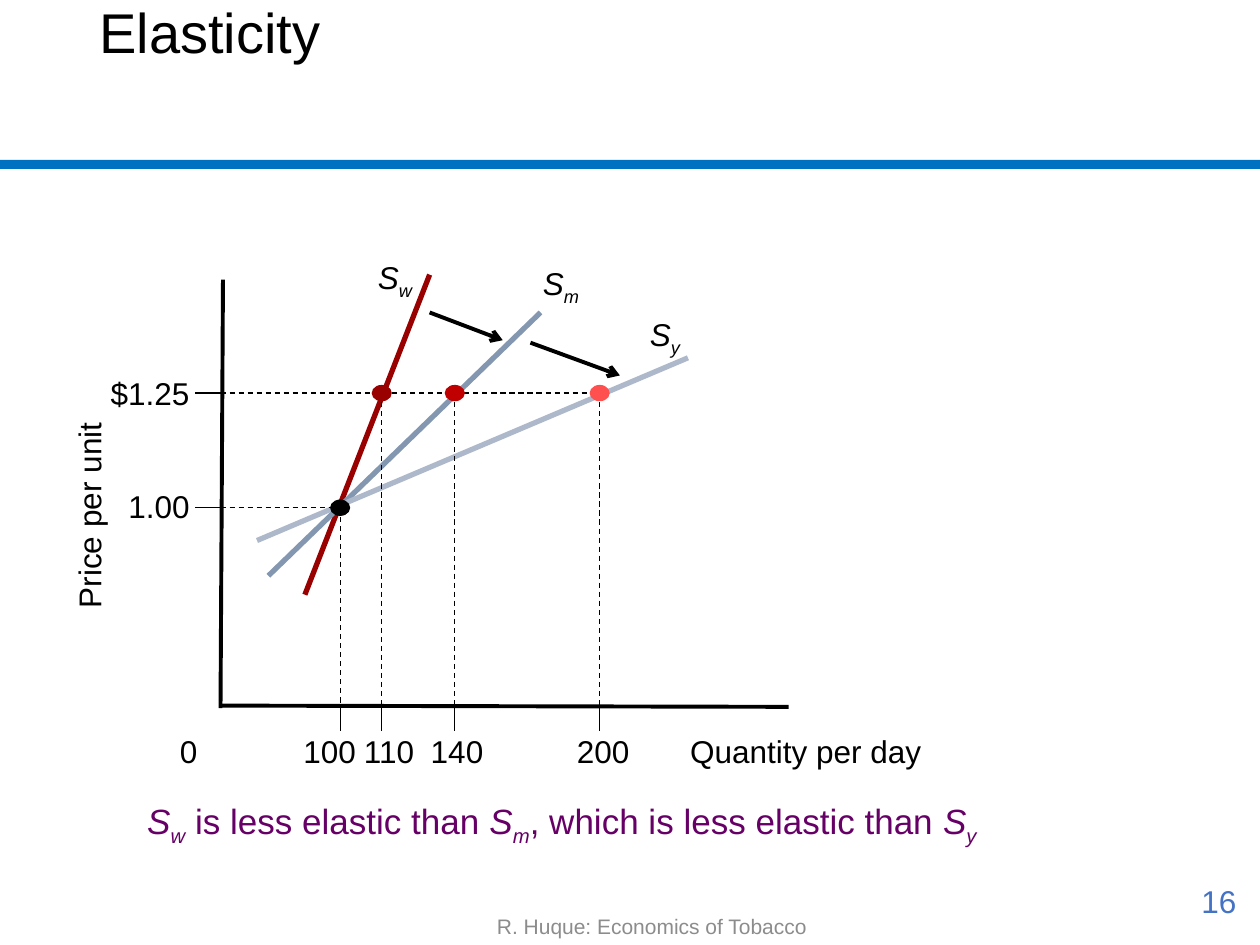
from lxml import etree
from pptx import Presentation
from pptx.dml.color import RGBColor
from pptx.enum.dml import MSO_LINE
from pptx.enum.shapes import MSO_CONNECTOR, MSO_SHAPE
from pptx.enum.text import MSO_ANCHOR, MSO_AUTO_SIZE, PP_ALIGN
from pptx.oxml.ns import qn
from pptx.util import Inches, Pt

STRAIGHT = MSO_CONNECTOR.STRAIGHT
RECTANGLE, OVAL = MSO_SHAPE.RECTANGLE, MSO_SHAPE.OVAL
DASH = MSO_LINE.DASH
GROW = MSO_AUTO_SIZE.SHAPE_TO_FIT_TEXT
TOP, MIDDLE, BOTTOM = MSO_ANCHOR.TOP, MSO_ANCHOR.MIDDLE, MSO_ANCHOR.BOTTOM
LEFT, CENTER, RIGHT = PP_ALIGN.LEFT, PP_ALIGN.CENTER, PP_ALIGN.RIGHT

FONT = "Arial"
BLACK = "000000"
WIDTH, HEIGHT = 10, 7.5
AXIS_X, AXIS_Y = 1.75, 5.6
LABEL_HEIGHT, LABEL_TOP = 0.4, 5.76
TICK = 0.2
DOT_WIDTH, DOT_HEIGHT = 0.16, 0.13
HIGH, LOW = 3.12, 4.03

AXES = [((1.77, 2.22), (AXIS_X, 5.62)), ((1.74, AXIS_Y), (6.26, 5.61))]
SUPPLY = [
    ("w", "990000", (2.42, 4.72), (3.41, 2.18), (2.9, 2, 0.49)),
    ("m", "8497B0", (2.13, 4.57), (4.29, 2.48), (4.21, 2.05, 0.51)),
    ("y", "ADB9CA", (2.04, 4.29), (5.46, 2.84), (5.06, 2.45, 0.45)),
]
QUANTITIES = [
    ("100", 2.7, LOW, BLACK, 2.31),
    ("110", 3.03, HIGH, "990000", 2.79),
    ("140", 3.61, HIGH, "C00000", 3.32),
    ("200", 4.76, HIGH, "FF5050", 4.48),
]
PRICES = [("$1.25", HIGH, 4.76, 0.78, 2.92, 0.83), ("1.00", LOW, 2.7, 0.92, 3.82, 0.69)]
SHIFTS = [((3.41, 2.48), (3.99, 2.7)), ((4.21, 2.72), (4.92, 2.98))]
CONCLUSION = [
    ("S", "italic"), ("w", "sub"), (" is less elastic than ", ""),
    ("S", "italic"), ("m", "sub"), (", which is less elastic than ", ""),
    ("S", "italic"), ("y", "sub"),
]


def color(value):
    return RGBColor.from_string(value)


def add_line(slide, start, end, line_color=BLACK, width=0.75, dashed=False, arrow=False):
    line = slide.shapes.add_connector(STRAIGHT, *map(Inches, start + end))
    line.line.color.rgb = color(line_color)
    line.line.width = Pt(width)
    if dashed:
        line.line.dash_style = DASH
    properties = line._element.spPr
    if arrow:
        etree.SubElement(properties.find(qn("a:ln")), qn("a:tailEnd"), type="arrow")
    etree.SubElement(properties, qn("a:effectLst"))


def add_filled(slide, kind, box, fill):
    shape = slide.shapes.add_shape(kind, *map(Inches, box))
    shape.shadow.inherit = False
    shape.fill.solid()
    shape.fill.fore_color.rgb = color(fill)
    shape.line.fill.background()


def add_text(slide, box, parts, size=18, text_color=BLACK, align=LEFT, anchor=TOP, wrap=False):
    shape = slide.shapes.add_textbox(*map(Inches, box))
    frame = shape.text_frame
    frame.word_wrap = wrap
    if not wrap:
        frame.auto_size = GROW
    frame.vertical_anchor = anchor
    paragraph = frame.paragraphs[0]
    paragraph.alignment = align
    for text, style in [(parts, "")] if isinstance(parts, str) else parts:
        run = paragraph.add_run()
        run.text = text
        run.font.name = FONT
        run.font.size = Pt(size)
        run.font.color.rgb = color(text_color)
        run.font.italic = style in ("italic", "sub")
        if style == "sub":
            run._r.get_or_add_rPr().set("baseline", "-25000")
    return shape


def add_frame(slide):
    add_filled(slide, RECTANGLE, (0, 1.27, WIDTH, 0.07), "0070C0")
    title = add_text(slide, (0.69, -0.01, 8.62, 1.28), "Elasticity", 32, wrap=True)
    title.text_frame.paragraphs[0].line_spacing = 0.9
    add_text(slide, (3.31, 7.1, 3.73, 0.4), "R. Huque: Economics of Tobacco", 12,
             "8C8C8C", CENTER, BOTTOM, True)
    add_text(slide, (7.66, 6.95, 2.25, 0.4), "16", 18, "4472C4", RIGHT, MIDDLE, True)


def add_diagram(slide):
    for start, end in AXES:
        add_line(slide, start, end, width=2.25)
    for name, line_color, start, end, (left, top, width) in SUPPLY:
        add_line(slide, start, end, line_color, 3)
        add_text(slide, (left, top, width, LABEL_HEIGHT), [("S", "italic"), (name, "sub")])
    for label, y, reach, left, top, width in PRICES:
        add_line(slide, (AXIS_X, y), (AXIS_X - TICK, y))
        add_line(slide, (AXIS_X, y), (reach, y), dashed=True)
        add_text(slide, (left, top, width, LABEL_HEIGHT), label)
    for label, x, y, fill, left in QUANTITIES:
        add_line(slide, (x, AXIS_Y), (x, AXIS_Y + TICK))
        add_line(slide, (x, y), (x, AXIS_Y), dashed=True)
        dot = (x - DOT_WIDTH / 2, y - DOT_HEIGHT / 2, DOT_WIDTH, DOT_HEIGHT)
        add_filled(slide, OVAL, dot, fill)
        add_text(slide, (left, LABEL_TOP, 0.62, LABEL_HEIGHT), label)
    add_text(slide, (1.33, LABEL_TOP, 0.34, LABEL_HEIGHT), "0")
    add_text(slide, (5.38, LABEL_TOP, 2.06, LABEL_HEIGHT), "Quantity per day")
    add_text(slide, (-0.13, 3.89, 1.67, LABEL_HEIGHT), "Price per unit").rotation = 270
    for start, end in SHIFTS:
        add_line(slide, start, end, width=2.25, arrow=True)


def main():
    presentation = Presentation()
    presentation.slide_width = Inches(WIDTH)
    presentation.slide_height = Inches(HEIGHT)
    slide = presentation.slides.add_slide(presentation.slide_layouts[6])
    add_frame(slide)
    add_diagram(slide)
    add_text(slide, (1.07, 6.3, 7.26, 0.43), CONCLUSION, 20, "660066", wrap=True)
    presentation.save("out.pptx")


if __name__ == "__main__":
    main()
